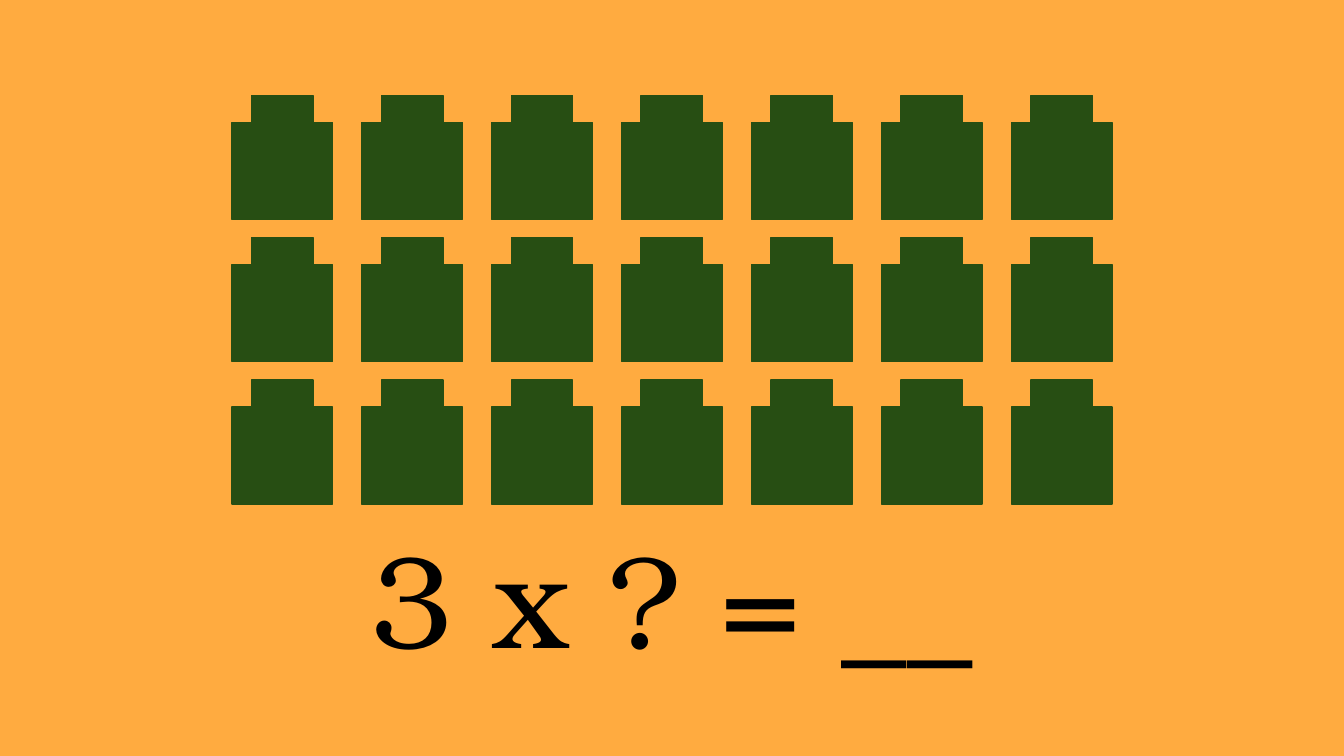
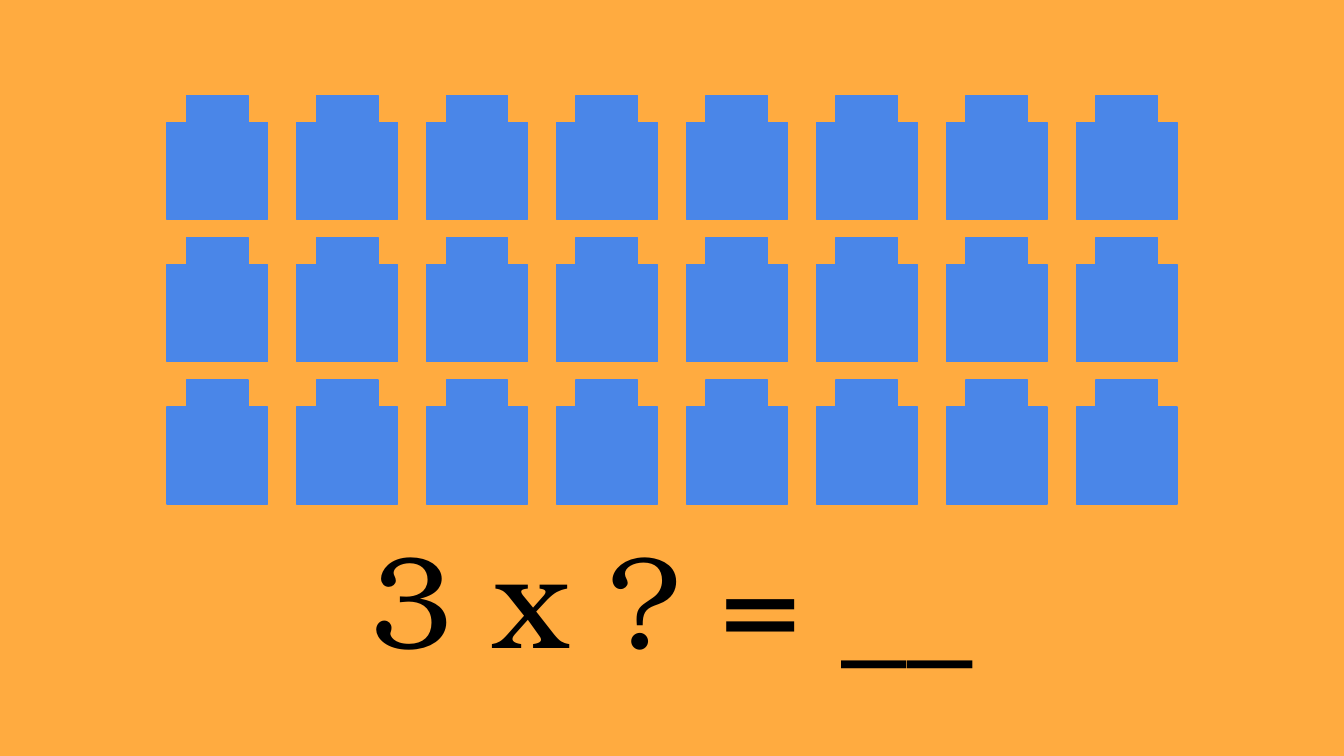
"""Build two multiplication slides, each showing a grid of blocks above an equation."""
from dataclasses import dataclass

from pptx import Presentation
from pptx.dml.color import RGBColor
from pptx.enum.shapes import MSO_SHAPE
from pptx.enum.text import MSO_ANCHOR, MSO_AUTO_SIZE, PP_ALIGN
from pptx.util import Pt

RECTANGLE = MSO_SHAPE.RECTANGLE
CENTER = PP_ALIGN.CENTER
TOP = MSO_ANCHOR.TOP
GROW = MSO_AUTO_SIZE.SHAPE_TO_FIT_TEXT


@dataclass(frozen=True)
class Theme:
    """Colours and type shared by the slides."""
    background: RGBColor = RGBColor.from_string("FFAB40")
    text: RGBColor = RGBColor.from_string("000000")
    green: RGBColor = RGBColor.from_string("274E13")
    blue: RGBColor = RGBColor.from_string("4A86E8")
    font: str = "TeX Gyre Bonum"
    equation_size: int = 70


THEME = Theme()
SLIDE_WIDTH, SLIDE_HEIGHT = 720, 405
ROWS = 3
GRID_TOP = 51.1
COLUMN_STEP, ROW_STEP = 69.6, 76.3
BODY_WIDTH, BODY_HEIGHT = 54, 52
STUD_WIDTH, STUD_HEIGHT = 33, 14.4


def add_equation(slide, equation):
    """Place the equation in the title placeholder below the grid."""
    title = slide.shapes.title
    title.left, title.top, title.width, title.height = Pt(0), Pt(270), Pt(SLIDE_WIDTH), Pt(99)
    text_frame = title.text_frame
    text_frame.text = equation
    text_frame.word_wrap = True
    text_frame.auto_size = GROW
    text_frame.vertical_anchor = TOP
    text_frame.margin_left = text_frame.margin_right = Pt(7.2)
    text_frame.margin_top = text_frame.margin_bottom = Pt(7.2)
    paragraph = text_frame.paragraphs[0]
    paragraph.alignment = CENTER
    font = paragraph.runs[0].font
    font.name = THEME.font
    font.size = Pt(THEME.equation_size)
    font.color.rgb = THEME.text


def add_block(slide, left, top, color):
    """Draw one block: a body with a centred stud on top."""
    stud_left = left + (BODY_WIDTH - STUD_WIDTH) / 2
    parts = (
        (left, top + STUD_HEIGHT, BODY_WIDTH, BODY_HEIGHT),
        (stud_left, top, STUD_WIDTH, STUD_HEIGHT),
    )
    for part in parts:
        shape = slide.shapes.add_shape(RECTANGLE, *map(Pt, part))
        shape.shadow.inherit = False
        shape.fill.solid()
        shape.fill.fore_color.rgb = color
        shape.line.color.rgb = color
        shape.line.width = Pt(0.75)


presentation = Presentation()
presentation.slide_width, presentation.slide_height = Pt(SLIDE_WIDTH), Pt(SLIDE_HEIGHT)
background = presentation.slide_master.background.fill
background.solid()
background.fore_color.rgb = THEME.background
title_only = presentation.slide_layouts.get_by_name("Title Only")

for columns, color in ((7, THEME.green), (8, THEME.blue)):
    slide = presentation.slides.add_slide(title_only)
    add_equation(slide, "3 x ? = __")
    grid_width = (columns - 1) * COLUMN_STEP + BODY_WIDTH
    grid_left = (SLIDE_WIDTH - grid_width) / 2
    for row in range(ROWS):
        for column in range(columns):
            add_block(slide, grid_left + column * COLUMN_STEP, GRID_TOP + row * ROW_STEP, color)

presentation.save("out.pptx")
